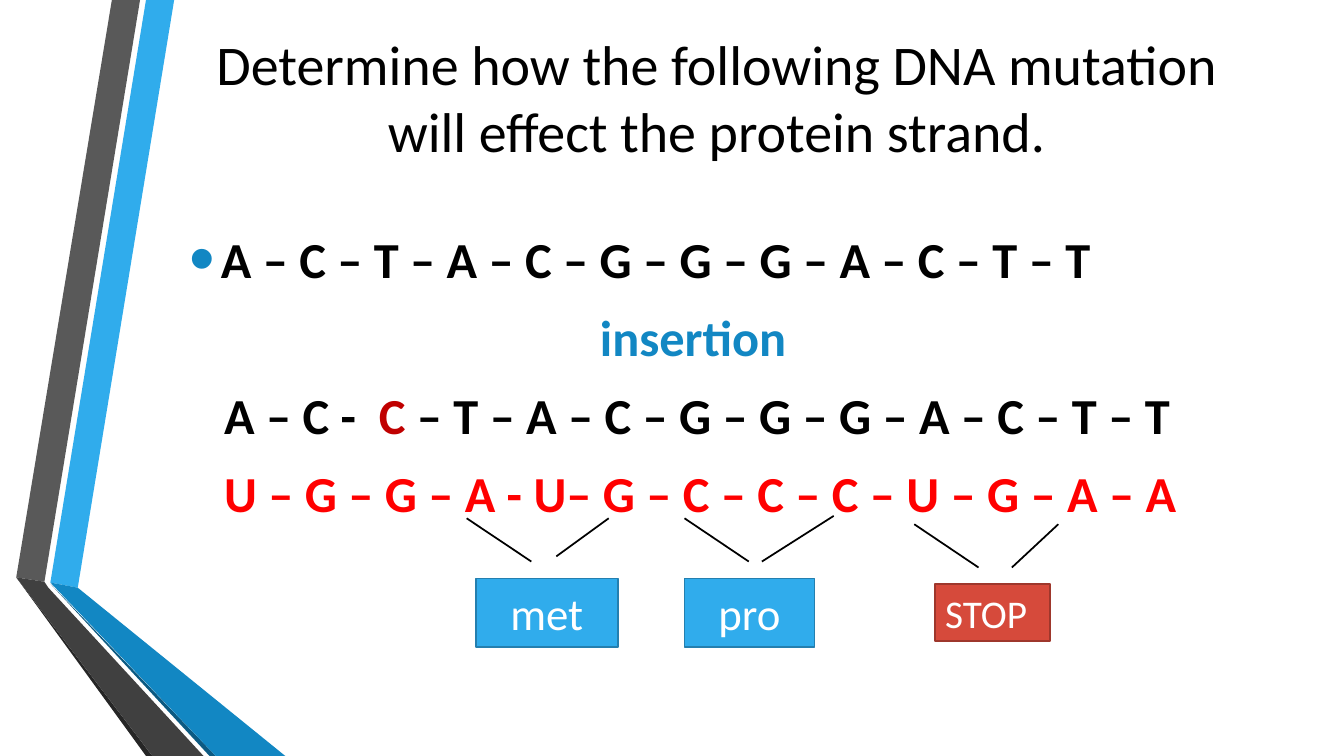
"""Build the slide about an insertion mutation in a DNA strand."""
import lxml.etree
import pptx
import pptx.dml.color
import pptx.enum.shapes
import pptx.enum.text
import pptx.oxml.ns
import pptx.util

Cm = pptx.util.Cm
Pt = pptx.util.Pt
RGBColor = pptx.dml.color.RGBColor
qn = pptx.oxml.ns.qn
ALIGN = pptx.enum.text.PP_ALIGN
MIDDLE = pptx.enum.text.MSO_ANCHOR.MIDDLE

BLACK = RGBColor(0x00, 0x00, 0x00)
WHITE = RGBColor(0xFF, 0xFF, 0xFF)
SKY = RGBColor(0x30, 0xAC, 0xEC)
SKY_EDGE = RGBColor(0x24, 0x7F, 0xAF)
BLUE = RGBColor(0x12, 0x87, 0xC3)
NAVY = RGBColor(0x0C, 0x5A, 0x82)
GREY = RGBColor(0x59, 0x59, 0x59)
CHARCOAL = RGBColor(0x40, 0x40, 0x40)
SHADE = RGBColor(0x26, 0x26, 0x26)
RED = RGBColor(0xFF, 0x00, 0x00)
DARK_RED = RGBColor(0xC0, 0x00, 0x00)
BRICK = RGBColor(0xD6, 0x4A, 0x3B)
BRICK_EDGE = RGBColor(0x9E, 0x37, 0x2C)

RIBBONS = [
    (SKY, [(1.27, 14.68), (1.96, 14.81), (4.39, 0), (3.68, 0)]),
    (GREY, [(3.53, 0), (2.82, 0), (0.41, 14.55), (1.12, 14.66)]),
    (SHADE, [(0.41, 14.55), (3.68, 19.05), (3.84, 19.05)]),
    (NAVY, [(1.27, 14.71), (5.28, 19.05), (5.44, 19.05)]),
    (BLUE, [(1.27, 14.68), (5.44, 19.05), (7.19, 19.05), (1.96, 14.81)]),
    (CHARCOAL, [(5.13, 19.05), (1.22, 14.81), (1.12, 14.66), (0.41, 14.55), (3.84, 19.05)]),
]

STRANDS = [
    (0.79, [("A – C – T – A – C – G – G – G – A – C – T – T", BLACK)]),
    (10.34, [("insertion", BLUE)]),
    (0.87, [("A – C -  ", BLACK), ("C", DARK_RED),
            (" – T – A – C – G – G – G – A – C – T – T", BLACK)]),
    (0.87, [("U – G – G – A - U– G – C – C – C – U – G – A – A", RED)]),
]

CODON_BRACKETS = [
    (11.76, 13.06, 13.39, 14.15), (15.34, 13.06, 14.02, 14.02),
    (17.25, 13.06, 18.87, 14.15), (21.01, 13.0, 19.2, 14.15),
    (23.04, 13.21, 24.66, 14.3), (26.67, 13.21, 25.5, 14.3),
]

AMINO_ACIDS = [
    ("met", (11.99, 14.58, 3.58, 1.73), SKY, SKY_EDGE, 32, ALIGN.CENTER),
    ("pro", (17.25, 14.58, 3.28, 1.73), SKY, SKY_EDGE, 32, ALIGN.CENTER),
    ("STOP", (23.57, 14.71, 2.9, 1.45), BRICK, BRICK_EDGE, 28, ALIGN.LEFT),
]


def add_text(paragraph, text, size=36, color=BLACK, bold=False):
    """Append a formatted run to a paragraph."""
    run = paragraph.add_run()
    run.text = text
    run.font.name = "Calibri"
    run.font.size = Pt(size)
    run.font.color.rgb = color
    run.font.bold = bold


def add_ribbon(slide, color, corners):
    """Draw one filled piece of the folded ribbon."""
    start, *others = [(Cm(x), Cm(y)) for x, y in corners]
    outline = slide.shapes.build_freeform(*start, scale=1.0)
    outline.add_line_segments(others, close=True)
    ribbon = outline.convert_to_shape()
    ribbon.shadow.inherit = False
    ribbon.fill.solid()
    ribbon.fill.fore_color.rgb = color
    ribbon.line.fill.background()


def fill_title(slide, text):
    """Place and format the title."""
    title = slide.shapes.title
    title.left, title.top, title.width, title.height = Cm(4.14), Cm(0), Cm(27.84), Cm(4.88)
    frame = title.text_frame
    frame.auto_size = pptx.enum.text.MSO_AUTO_SIZE.NONE
    frame.word_wrap = True
    frame.vertical_anchor = MIDDLE
    frame.paragraphs[0].alignment = ALIGN.CENTER
    add_text(frame.paragraphs[0], text, size=40)


def indent(paragraph, margin, first_line=0.0):
    """Set the left margin and first-line indent of a paragraph."""
    properties = paragraph._p.get_or_add_pPr()
    properties.set("marL", str(Cm(margin)))
    properties.set("indent", str(Cm(first_line)))


def add_bullet(paragraph, color):
    """Give a paragraph an enlarged coloured round bullet."""
    properties = paragraph._p.get_or_add_pPr()
    bullet_color = lxml.etree.SubElement(properties, qn("a:buClr"))
    lxml.etree.SubElement(bullet_color, qn("a:srgbClr"), val=str(color))
    lxml.etree.SubElement(properties, qn("a:buSzPct"), val="145000")
    lxml.etree.SubElement(properties, qn("a:buFont"), typeface="Arial")
    lxml.etree.SubElement(properties, qn("a:buChar"), char="•")


def add_strands(slide):
    """Write the DNA strands, the mutation name and the mRNA strand."""
    frame = slide.shapes.add_textbox(Cm(4.78), Cm(5.74), Cm(27.5), Cm(8)).text_frame
    frame.word_wrap = True
    frame.margin_left = frame.margin_top = frame.margin_right = frame.margin_bottom = 0
    for row, (margin, parts) in enumerate(STRANDS):
        strand = frame.add_paragraph() if row else frame.paragraphs[0]
        strand.space_after = Pt(12.5)
        indent(strand, margin, 0 if row else -margin)
        if row == 0:
            add_bullet(strand, BLUE)
        for text, color in parts:
            add_text(strand, text, color=color, bold=True)


def add_bracket_line(slide, x1, y1, x2, y2):
    """Draw one line from a codon towards its amino acid."""
    bracket = slide.shapes.add_connector(
        pptx.enum.shapes.MSO_CONNECTOR.STRAIGHT, Cm(x1), Cm(y1), Cm(x2), Cm(y2))
    bracket.line.color.rgb = BLACK
    bracket.line.width = Pt(1.25)
    lxml.etree.SubElement(bracket._element.spPr, qn("a:effectLst"))


def add_amino_acid(slide, name, place, fill, edge, size, alignment):
    """Draw a labelled amino acid box."""
    box = slide.shapes.add_shape(
        pptx.enum.shapes.MSO_SHAPE.RECTANGLE, *[Cm(length) for length in place])
    box.shadow.inherit = False
    box.fill.solid()
    box.fill.fore_color.rgb = fill
    box.line.color.rgb = edge
    box.line.width = Pt(1.25)
    box.text_frame.vertical_anchor = MIDDLE
    label = box.text_frame.paragraphs[0]
    label.alignment = alignment
    add_text(label, name, size=size, color=WHITE)


def main():
    """Build and save the slide."""
    deck = pptx.Presentation()
    deck.slide_width, deck.slide_height = Cm(33.87), Cm(19.05)
    slide = deck.slides.add_slide(deck.slide_layouts.get_by_name("Title Only"))
    for color, corners in RIBBONS:
        add_ribbon(slide, color, corners)
    fill_title(slide, "Determine how the following DNA mutation will effect the protein strand.")
    add_strands(slide)
    for ends in CODON_BRACKETS:
        add_bracket_line(slide, *ends)
    for amino_acid in AMINO_ACIDS:
        add_amino_acid(slide, *amino_acid)
    deck.save("out.pptx")


if __name__ == "__main__":
    main()
